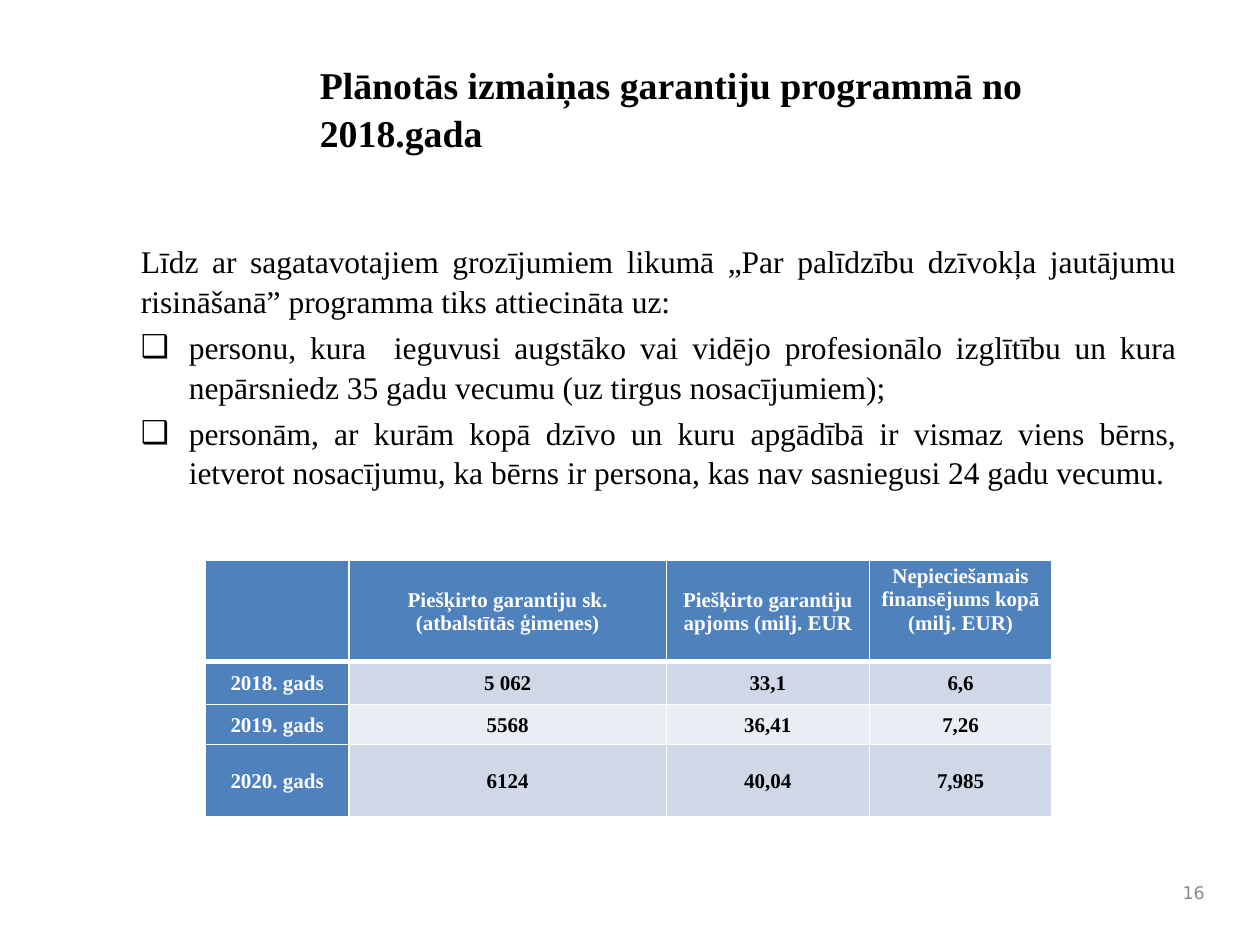
import pptx
import pptx.util
import pptx.dml.color
import pptx.enum.text
import pptx.oxml
import pptx.oxml.ns
from lxml import etree

Inches, Pt = pptx.util.Inches, pptx.util.Pt
ALIGN = pptx.enum.text.PP_ALIGN
MIDDLE = pptx.enum.text.MSO_ANCHOR.MIDDLE
SERIF, SANS = "Times New Roman", "DejaVu Sans"
COLORS = {"text": "000000", "white": "FFFFFF", "gray": "898989",
          "head": "4F81BD", "odd": "D0D8E8", "even": "E9EDF4"}

# Content
TITLE = "Plānotās izmaiņas garantiju programmā no 2018.gada"
INTRO = ("Līdz ar sagatavotajiem grozījumiem likumā „Par palīdzību dzīvokļa "
         "jautājumu risināšanā” programma tiks attiecināta uz:")
POINTS = [
    "personu, kura  ieguvusi augstāko vai vidējo profesionālo izglītību un "
    "kura nepārsniedz 35 gadu vecumu (uz tirgus nosacījumiem);",
    "personām, ar kurām kopā dzīvo un kuru apgādībā ir vismaz viens bērns, "
    "ietverot nosacījumu, ka bērns ir persona, kas nav sasniegusi 24 gadu vecumu.",
]
ROWS = [
    ("", "Piešķirto garantiju sk. (atbalstītās ģimenes)",
     "Piešķirto garantiju apjoms (milj. EUR",
     "Nepieciešamais finansējums kopā (milj. EUR)"),
    ("2018. gads", "5 062", "33,1", "6,6"),
    ("2019. gads", "5568", "36,41", "7,26"),
    ("2020. gads", "6124", "40,04", "7,985"),
]
WIDTHS = [1.14, 2.52, 1.61, 1.45]
HEIGHTS = [0.77, 0.34, 0.32, 0.57]
NUMBER = "16"


def paint(para, size, color="text", face=SERIF, bold=False):
    for run in para.runs:
        font = run.font
        font.name, font.size, font.bold = face, Pt(size), bold
        font.color.rgb = pptx.dml.color.RGBColor.from_string(COLORS[color])


def add_box(slide, *place):
    frame = slide.shapes.add_textbox(*map(Inches, place)).text_frame
    frame.word_wrap = True
    return frame


def add_bullet(para):
    props = para._p.get_or_add_pPr()
    props.set("marL", str(Inches(0.38)))
    props.set("indent", str(-Inches(0.38)))
    tag = pptx.oxml.ns.qn
    etree.SubElement(props, tag("a:buFont")).set("typeface", SANS)
    etree.SubElement(props, tag("a:buChar")).set("char", "❑")


def add_edges(cell, row):
    props = cell._tc.get_or_add_tcPr()
    wide = {0: "B", 1: "T"}.get(row)
    for at, side in enumerate("LRTB"):
        width = Pt(3 if side == wide else 1)
        props.insert(at, pptx.oxml.parse_xml(
            f'<a:ln{side} {pptx.oxml.ns.nsdecls("a")} w="{width}"><a:solidFill>'
            f'<a:srgbClr val="{COLORS["white"]}"/></a:solidFill></a:ln{side}>'))


deck = pptx.Presentation()
deck.slide_width, deck.slide_height = Inches(10), Inches(7.5)
slide = deck.slides.add_slide(deck.slide_layouts[6])

# Title
frame = add_box(slide, 2.44, 0.42, 7.06, 1.13)
frame.text = TITLE
frame.paragraphs[0].line_spacing = 1.06
paint(frame.paragraphs[0], 21.6, bold=True)

# Body with bullets
frame = add_box(slide, 1.02, 1.86, 8.42, 4.38)
frame.text = "\n".join([INTRO] + POINTS)
for i, para in enumerate(frame.paragraphs):
    para.alignment = ALIGN.JUSTIFY
    para.line_spacing = 1.05
    if i:
        para.space_before = Pt(3.6)
        add_bullet(para)
    paint(para, 18)

# Table
table = slide.shapes.add_table(
    len(ROWS), len(WIDTHS), Inches(1.63), Inches(4.45),
    Inches(sum(WIDTHS)), Inches(sum(HEIGHTS))).table
for col, width in zip(table.columns, WIDTHS):
    col.width = Inches(width)
for r, values in enumerate(ROWS):
    table.rows[r].height = Inches(HEIGHTS[r])
    for c, value in enumerate(values):
        cell = table.cell(r, c)
        head = r == 0 or c == 0
        last = c == len(WIDTHS) - 1
        cell.text = value
        cell.vertical_anchor = MIDDLE
        cell.margin_left = cell.margin_right = Inches(0.01 if last else 0.07)
        cell.margin_top = Inches(0.01)
        cell.margin_bottom = Inches(0.19 if last and r == 0 else 0)
        cell.fill.solid()
        fill = "head" if head else "odd" if r % 2 else "even"
        cell.fill.fore_color.rgb = pptx.dml.color.RGBColor.from_string(COLORS[fill])
        add_edges(cell, r)
        para = cell.text_frame.paragraphs[0]
        para.alignment = ALIGN.CENTER
        paint(para, 12, "white" if head else "text", bold=True)

# Slide number
frame = add_box(slide, 9.21, 6.92, 0.45, 0.33)
frame.text = NUMBER
frame.vertical_anchor = MIDDLE
frame.paragraphs[0].alignment = ALIGN.RIGHT
paint(frame.paragraphs[0], 10, "gray", SANS)

deck.save("out.pptx")
